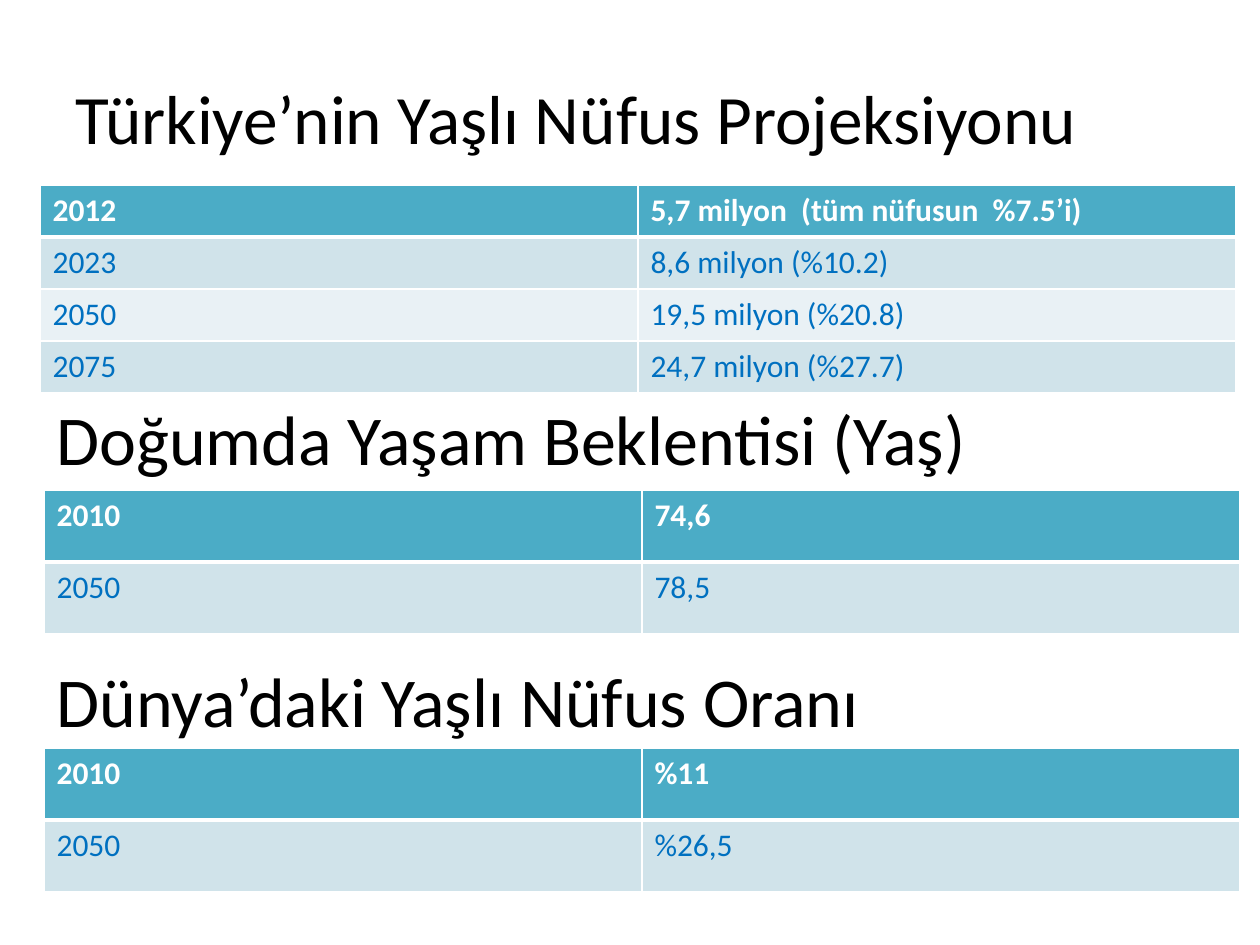
from lxml.etree import SubElement
from pptx import Presentation
from pptx.dml.color import RGBColor
from pptx.enum.text import MSO_ANCHOR, MSO_AUTO_SIZE, PP_ALIGN
from pptx.oxml.ns import qn
from pptx.util import Pt

EMU_PER_PX = 914400 / 126
HEADER_FILL, BAND_FILLS = "4BACC6", ["D0E3EA", "E9F1F5"]


def px(*lengths):
    """Turn pixel lengths into a list of EMU."""
    return [round(length * EMU_PER_PX) for length in lengths]


def write(text_frame, text, size, color, bold=False):
    text_frame.text = text
    paragraph = text_frame.paragraphs[0]
    paragraph.alignment = PP_ALIGN.LEFT
    font_format = {"name": "Calibri", "size": Pt(size), "bold": bold}
    for attribute, value in font_format.items():
        setattr(paragraph.runs[0].font, attribute, value)
    paragraph.runs[0].font.color.rgb = RGBColor.from_string(color)


presentation = Presentation()
presentation.slide_width, presentation.slide_height = px(1260, 945)
slide = presentation.slides.add_slide(presentation.slide_layouts[5])

title = slide.shapes.title
title.left, title.top, title.width, title.height = px(63, 38, 1134, 158)
write(title.text_frame, "Türkiye’nin Yaşlı Nüfus Projeksiyonu", 39.6, "000000")
title_format = {"auto_size": MSO_AUTO_SIZE.NONE, "vertical_anchor": MSO_ANCHOR.MIDDLE}
for attribute, value in title_format.items():
    setattr(title.text_frame, attribute, value)

# left, top, row height, rows
tables = [
    (40, 185, 52, [
        ("2012", "5,7 milyon  (tüm nüfusun  %7.5’i)"),
        ("2023", "8,6 milyon (%10.2)"),
        ("2050", "19,5 milyon (%20.8)"),
        ("2075", "24,7 milyon (%27.7)"),
    ]),
    (44, 490, 72, [("2010", "74,6"), ("2050", "78,5")]),
    (44, 748, 72, [("2010", "%11"), ("2050", "%26,5")]),
]
for left, top, row_height, rows in tables:
    frame = slide.shapes.add_table(
        len(rows), 2, *px(left, top, 1196, row_height * len(rows)))
    for row_index, row in enumerate(rows):
        is_header = row_index == 0
        # The rule under the header is thicker than the other cell borders.
        border_widths = {
            "a:lnL": 1,
            "a:lnR": 1,
            "a:lnT": 3 if row_index == 1 else 1,
            "a:lnB": 3 if is_header else 1,
        }
        for column_index, text in enumerate(row):
            cell = frame.table.cell(row_index, column_index)
            write(cell.text_frame, text, 18, "FFFFFF" if is_header else "0070C0", is_header)
            properties = cell._tc.get_or_add_tcPr()
            for tag, width in border_widths.items():
                line = SubElement(properties, qn(tag), w=str(Pt(width)))
                line_fill = SubElement(line, qn("a:solidFill"))
                SubElement(line_fill, qn("a:srgbClr"), val="FFFFFF")
            cell.fill.solid()
            fill = HEADER_FILL if is_header else BAND_FILLS[(row_index - 1) % 2]
            cell.fill.fore_color.rgb = RGBColor.from_string(fill)

headings = [
    (389, "Doğumda Yaşam Beklentisi (Yaş)"),
    (651, "Dünya’daki Yaşlı Nüfus Oranı"),
]
for top, text in headings:
    heading = slide.shapes.add_textbox(*px(44, top, 1062, 97))
    heading.text_frame.word_wrap = True
    heading.text_frame.auto_size = MSO_AUTO_SIZE.SHAPE_TO_FIT_TEXT
    write(heading.text_frame, text, 40, "000000")

presentation.save("out.pptx")
